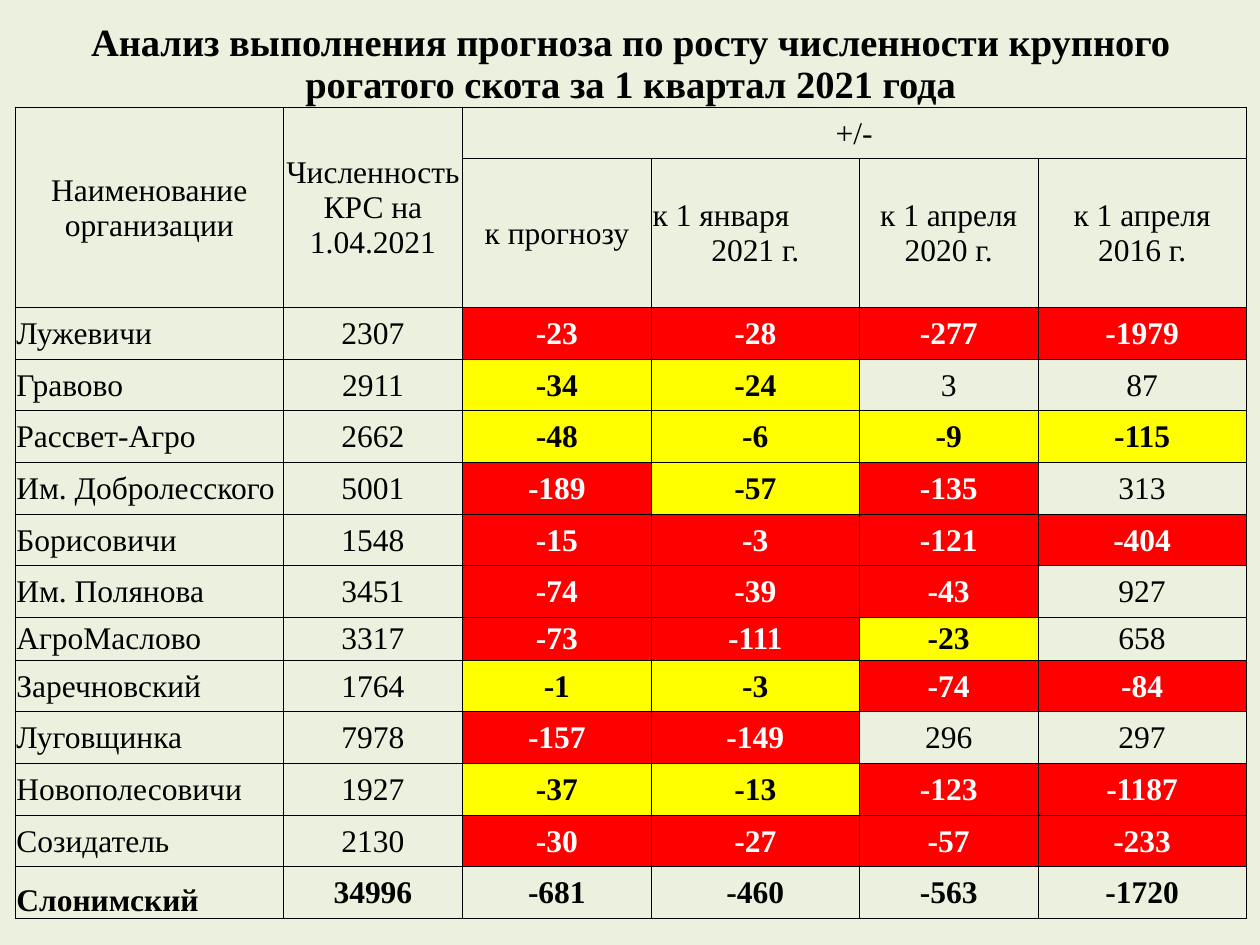
from dataclasses import dataclass

from lxml.etree import SubElement
from pptx import Presentation
from pptx.dml.color import RGBColor as RGB
from pptx.enum.text import MSO_ANCHOR as ANCHOR, PP_ALIGN as ALIGN
from pptx.oxml.ns import qn
from pptx.util import Inches, Pt


@dataclass(frozen=True)
class Theme:
    font: str = "Times New Roman"
    title_size: int = 22
    body_size: int = 18
    background: str = "EBF1DE"
    text: str = "000000"
    light_text: str = "FFFFFF"
    border: str = "000000"
    border_width: float = 0.5
    red: str = "FF0000"
    yellow: str = "FFFF00"


THEME = Theme()

TITLE = ("Анализ выполнения прогноза по росту численности крупного "
         "рогатого скота за 1 квартал 2021 года")
COL_WIDTHS = [2.13, 1.42, 1.5, 1.65, 1.42, 1.65]
ROW_HEIGHT = 0.41
SPECIAL_HEIGHTS = {0: 0.8, 2: 1.18, 9: 0.34}
FIRST_DATA_ROW = 3

MARKS = {
    "r": dict(fill=THEME.red, color=THEME.light_text, bold=True),
    "y": dict(fill=THEME.yellow, bold=True),
    "-": dict(fill=THEME.background),
}
FARMS = [
    ("Лужевичи", 2307, (-23, -28, -277, -1979), "rrrr"),
    ("Гравово", 2911, (-34, -24, 3, 87), "yy--"),
    ("Рассвет-Агро", 2662, (-48, -6, -9, -115), "yyyy"),
    ("Им. Добролесского", 5001, (-189, -57, -135, 313), "ryr-"),
    ("Борисовичи", 1548, (-15, -3, -121, -404), "rrrr"),
    ("Им. Полянова", 3451, (-74, -39, -43, 927), "rrr-"),
    ("АгроМаслово", 3317, (-73, -111, -23, 658), "rry-"),
    ("Заречновский", 1764, (-1, -3, -74, -84), "yyrr"),
    ("Луговщинка", 7978, (-157, -149, 296, 297), "rr--"),
    ("Новополесовичи", 1927, (-37, -13, -123, -1187), "yyrr"),
    ("Созидатель", 2130, (-30, -27, -57, -233), "rrrr"),
]
DISTRICT = ("Слонимский", 34996, (-681, -460, -563, -1720))


def set_text(cell, text, size=THEME.body_size, color=THEME.text, bold=False,
             align=ALIGN.CENTER, anchor=ANCHOR.MIDDLE, fill=None):
    cell.margin_left = cell.margin_right = cell.margin_top = Inches(0.01)
    cell.margin_bottom = 0
    cell.vertical_anchor = anchor
    tf = cell.text_frame
    tf.text = str(text)
    for p in tf.paragraphs:
        p.alignment = align
        font = p.runs[0].font
        font.name, font.size, font.bold = THEME.font, Pt(size), bold
        font.color.rgb = RGB.from_string(color)
    if fill:
        cell.fill.solid()
        cell.fill.fore_color.rgb = RGB.from_string(fill)


def set_borders(cell, visible):
    tc_pr = cell._tc.get_or_add_tcPr()
    for i, side in enumerate("LRTB"):
        ln = SubElement(tc_pr, qn(f"a:ln{side}"), w=str(Pt(THEME.border_width)))
        if side in visible:
            solid = SubElement(ln, qn("a:solidFill"))
            SubElement(solid, qn("a:srgbClr"), val=THEME.border)
        else:
            SubElement(ln, qn("a:noFill"))
        tc_pr.insert(i, ln)


def add_grid(s, row_count):
    heights = [SPECIAL_HEIGHTS.get(i, ROW_HEIGHT) for i in range(row_count)]
    frame = s.shapes.add_table(row_count, len(COL_WIDTHS), Inches(0.12), Inches(0.05),
                               Inches(sum(COL_WIDTHS)), Inches(sum(heights)))
    table = frame.table
    table.first_row = table.horz_banding = False
    for col, width in zip(table.columns, COL_WIDTHS):
        col.width = Inches(width)
    for i, (row, height) in enumerate(zip(table.rows, heights)):
        row.height = Inches(height)
        for cell in row.cells:
            cell.fill.background()
            set_borders(cell, "LRTB" if i else "B")
    return table


def fill_header(table):
    table.cell(0, 0).merge(table.cell(0, 5))
    table.cell(1, 0).merge(table.cell(2, 0))
    table.cell(1, 1).merge(table.cell(2, 1))
    table.cell(1, 2).merge(table.cell(1, 5))
    set_text(table.cell(0, 0), TITLE, size=THEME.title_size, bold=True,
             anchor=ANCHOR.BOTTOM)
    set_text(table.cell(1, 0), "Наименование организации")
    set_text(table.cell(1, 1), "Численность КРС на 1.04.2021")
    set_text(table.cell(1, 2), "+/-")
    periods = ["к прогнозу", "к 1 января\n2021 г.",
               "к 1 апреля 2020 г.", "к 1 апреля 2016 г."]
    for c, period in enumerate(periods, 2):
        set_text(table.cell(2, c), period)
    table.cell(2, 3).text_frame.paragraphs[0].alignment = ALIGN.LEFT


def fill_farm(table, r, name, herd, changes, marks):
    set_text(table.cell(r, 0), name, align=ALIGN.LEFT)
    set_text(table.cell(r, 1), herd)
    for c, (change, mark) in enumerate(zip(changes, marks), 2):
        set_text(table.cell(r, c), change, **MARKS[mark])


def fill_total(table, r, name, herd, changes):
    set_text(table.cell(r, 0), name, bold=True, align=ALIGN.LEFT, anchor=ANCHOR.BOTTOM)
    set_text(table.cell(r, 1), herd, bold=True)
    for c, change in enumerate(changes, 2):
        set_text(table.cell(r, c), change, bold=True, fill=THEME.background)


def main():
    prs = Presentation()
    prs.slide_width, prs.slide_height = Inches(10), Inches(7.5)
    s = prs.slides.add_slide(prs.slide_layouts[6])
    s.background.fill.solid()
    s.background.fill.fore_color.rgb = RGB.from_string(THEME.background)
    total_row = FIRST_DATA_ROW + len(FARMS)
    table = add_grid(s, total_row + 1)
    fill_header(table)
    for r, farm in enumerate(FARMS, FIRST_DATA_ROW):
        fill_farm(table, r, *farm)
    fill_total(table, total_row, *DISTRICT)
    prs.save("out.pptx")


if __name__ == "__main__":
    main()
